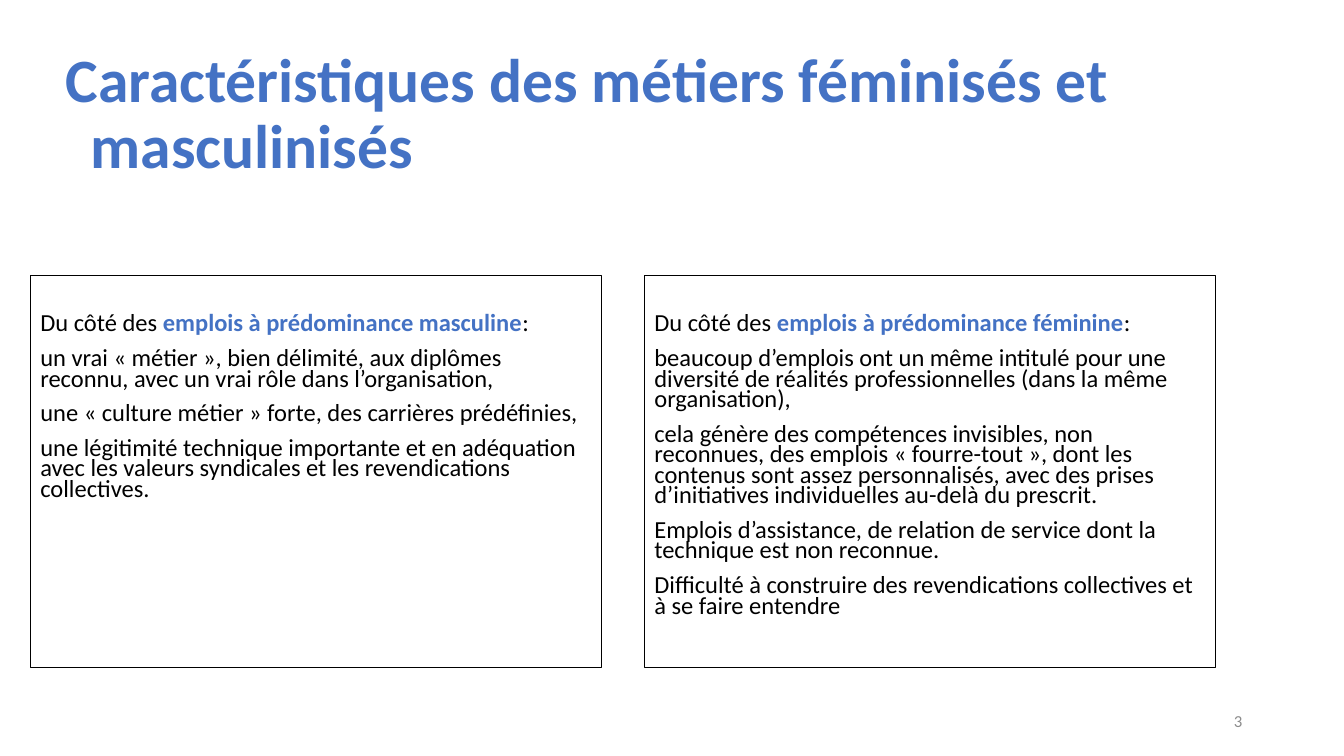
from pptx import Presentation
from pptx.dml.color import RGBColor
from pptx.enum import text
from pptx.oxml.ns import qn
from pptx.util import Inches, Pt
from lxml import etree

# Content
TITLE = "Caractéristiques des métiers féminisés et masculinisés"
LEAD = "Du côté des "
PANELS = [
    ("emplois à prédominance masculine", [
        "un vrai « métier », bien délimité, aux diplômes reconnu, avec un vrai rôle dans l’organisation,",
        "une « culture métier » forte, des carrières prédéfinies,",
        "une légitimité technique importante et en adéquation avec les valeurs syndicales et les revendications collectives.",
    ]),
    ("emplois à prédominance féminine", [
        "beaucoup d’emplois ont un même intitulé pour une diversité de réalités professionnelles (dans la même organisation),",
        "cela génère des compétences invisibles, non reconnues, des emplois « fourre-tout », dont les contenus sont assez personnalisés, avec des prises d’initiatives individuelles au-delà du prescrit.",
        "Emplois d’assistance, de relation de service dont la technique est non reconnue.",
        "Difficulté à construire des revendications collectives et à se faire entendre",
    ]),
]
NUMBER = "3"

# Format
COLORS = {"accent": "4472C4", "ink": "000000", "muted": "8C8C8C"}
FRAME = {"word_wrap": True, "auto_size": text.MSO_AUTO_SIZE.NONE,
         "margin_left": Inches(0.1), "margin_right": Inches(0.1),
         "margin_top": Inches(0.05), "margin_bottom": Inches(0.05)}
MIDDLE = {**FRAME, "vertical_anchor": text.MSO_ANCHOR.MIDDLE}
PANEL = {**FRAME, "vertical_anchor": text.MSO_ANCHOR.TOP,
         "margin_top": Inches(0.4)}
HEAD = {"alignment": text.PP_ALIGN.LEFT, "line_spacing": 0.9,
        "space_before": Pt(10)}
ITEM = {**HEAD, "line_spacing": 0.7}
LEFT, TOP, WIDTH, HEIGHT, STEP = 0.3, 2.73, 5.67, 3.89, 6.09


def apply(item, values):
    for name, value in values.items():
        setattr(item, name, value)


def place(shape, *box):
    apply(shape, dict(zip(("left", "top", "width", "height"),
                          map(Inches, box))))


def color(name):
    return RGBColor.from_string(COLORS[name])


def write(para, words, size, tone, bold=False):
    run = para.add_run()
    run.text = words
    apply(run.font, {"name": "Calibri", "size": Pt(size), "bold": bold})
    run.font.color.rgb = color(tone)


def indent(para, margin, hang):
    props = para._p.get_or_add_pPr()
    props.set("marL", str(Inches(margin)))
    props.set("indent", str(Inches(hang)))
    etree.SubElement(props, qn("a:buNone"))


def fill_panel(shape, topic, points):
    frame = shape.text_frame
    apply(frame, PANEL)
    shape.line.color.rgb = color("ink")
    shape.line.width = Pt(0.75)
    rows = [[(LEAD, "ink", False), (topic, "accent", True),
             (":", "ink", False)]]
    rows += [[(point, "ink", False)] for point in points]
    for i, row in enumerate(rows):
        para = frame.add_paragraph() if i else frame.paragraphs[0]
        apply(para, ITEM)
        indent(para, 0, 0)
        for words, tone, bold in row:
            write(para, words, 17.5, tone, bold)


def main():
    deck = Presentation()
    apply(deck, {"slide_width": Inches(13.33), "slide_height": Inches(7.5)})
    slide = deck.slides.add_slide(deck.slide_layouts[3])

    # Title
    title, *bodies = slide.placeholders
    place(title, 0.55, 0.25, 11.5, 1.79)
    apply(title.text_frame, MIDDLE)
    para = title.text_frame.paragraphs[0]
    apply(para, HEAD)
    indent(para, 0.25, -0.25)
    write(para, TITLE, 44, "accent", True)

    # Two panels
    for i, (body, panel) in enumerate(zip(bodies, PANELS)):
        place(body, LEFT + i * STEP, TOP, WIDTH, HEIGHT)
        fill_panel(body, *panel)

    # Page number
    page = slide.shapes.add_textbox(*map(Inches, (9.42, 6.95, 3, 0.4)))
    apply(page.text_frame, MIDDLE)
    para = page.text_frame.paragraphs[0]
    para.alignment = text.PP_ALIGN.RIGHT
    write(para, NUMBER, 12, "muted")

    deck.save("out.pptx")


if __name__ == "__main__":
    main()
